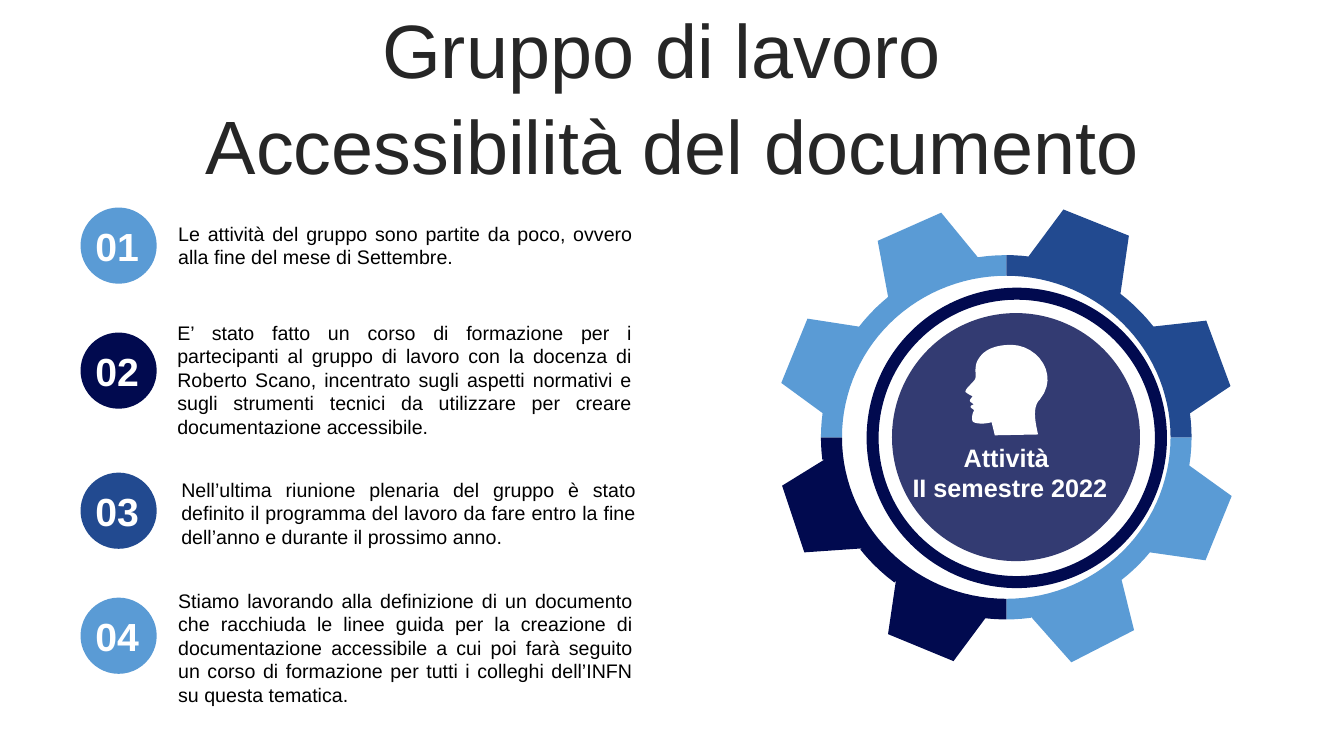
import math

import lxml.etree
import pptx
import pptx.dml.color
import pptx.enum.shapes
import pptx.enum.text
import pptx.oxml.ns
import pptx.util

Cm = pptx.util.Cm
Shapes = pptx.enum.shapes.MSO_SHAPE
Align = pptx.enum.text.PP_ALIGN
Anchor = pptx.enum.text.MSO_ANCHOR

LIGHT, NAVY, BLUE = "5A9BD5", "010A4F", "224A90"
WHITE, BLACK, CHARCOAL = "FFFFFF", "000000", "262626"

# Number, circle colour, circle top, text left, text top, text height, text
ACTIVITIES = [
    ("01", LIGHT, 5.23, 4.24, 5.46, 1.45,
     "Le attività del gruppo sono partite da poco, ovvero alla fine del mese di Settembre."),
    ("02", NAVY, 8.38, 4.22, 7.95, 3.25,
     "E’ stato fatto un corso di formazione per i partecipanti al gruppo di lavoro con la "
     "docenza di Roberto Scano, incentrato sugli aspetti normativi e sugli strumenti tecnici "
     "da utilizzare per creare documentazione accessibile."),
    ("03", BLUE, 11.91, 4.32, 11.91, 2.06,
     "Nell’ultima riunione plenaria del gruppo è stato definito il programma del lavoro da "
     "fare entro la fine dell’anno e durante il prossimo anno."),
    ("04", LIGHT, 15.06, 4.24, 14.71, 3.25,
     "Stiamo lavorando alla definizione di un documento che racchiuda le linee guida per la "
     "creazione di documentazione accessibile a cui poi farà seguito un corso di formazione "
     "per tutti i colleghi dell’INFN su questa tematica."),
]

GEAR_CENTER = (25.36, 11.02)
GEAR_INNER = (4.14, 4.07)
GEAR_OUTER = (4.67, 4.59)
# Clockwise from the right: colour and two teeth for each quarter of the gear
GEAR_QUARTERS = [
    (LIGHT, [(29.97, 11.73), (31.04, 12.5), (30.38, 14.12), (28.98, 13.92)],
     [(28.27, 14.63), (28.58, 15.88), (27, 16.69), (25.98, 15.54)]),
    (NAVY, [(24.84, 15.57), (24.03, 16.66), (22.38, 15.98), (22.58, 14.63)],
     [(21.72, 13.82), (20.27, 13.92), (19.71, 12.24), (20.78, 11.58)]),
    (LIGHT, [(20.73, 10.41), (19.69, 9.65), (20.35, 8.03), (21.64, 8.23)],
     [(22.38, 7.47), (22.12, 6.07), (23.72, 5.36), (24.64, 6.48)]),
    (BLUE, [(25.93, 6.45), (26.8, 5.28), (28.45, 5.94), (28.24, 7.39)],
     [(29.06, 8.23), (30.4, 8.08), (31.01, 9.73), (30, 10.41)]),
]

HEAD_START = (25.5, 8.69)
# Each entry is a straight line (one point) or a Bézier curve (three points)
HEAD_SEGMENTS = [
    [(25.02, 8.69), (24.74, 8.84), (24.61, 9.14)],
    [(24.54, 9.4), (24.64, 9.5), (24.54, 9.6)],
    [(24.43, 9.73), (24.33, 9.8), (24.33, 9.88)],
    [(24.38, 9.91), (24.43, 9.96), (24.51, 9.98)],
    [(24.49, 10.03), (24.41, 10.08), (24.46, 10.13)],
    [(24.54, 10.19)],
    [(24.51, 10.21), (24.46, 10.21), (24.46, 10.26)],
    [(24.49, 10.31), (24.56, 10.31), (24.54, 10.36)],
    [(24.49, 10.44), (24.49, 10.57), (24.51, 10.62)],
    [(24.59, 10.69), (24.82, 10.69), (24.99, 10.64)],
    [(25.07, 10.97)],
    [(26.16, 10.95)],
    [(26.04, 10.44), (26.06, 10.21), (26.21, 10.06)],
    [(26.7, 9.45), (26.16, 8.71), (25.5, 8.69)],
]


def color(hex_string):
    return pptx.dml.color.RGBColor.from_string(hex_string)


def gear_angle(point):
    """Angle in degrees, from 0 to 360, of a point on the gear's outer rim."""
    dx, dy = ((p - c) / r for p, c, r in zip(point, GEAR_CENTER, GEAR_OUTER))
    return math.degrees(math.atan2(dy, dx)) % 360


def gear_arc(radii, start, end):
    steps = max(2, math.ceil(abs(end - start) / 3))
    angles = [math.radians(start + (end - start) * i / steps) for i in range(steps + 1)]
    return [(GEAR_CENTER[0] + radii[0] * math.cos(a),
             GEAR_CENTER[1] + radii[1] * math.sin(a)) for a in angles]


def gear_quarter(start, first, second):
    """Outline of one quarter: rim and two teeth outside, plain arc inside."""
    end = start + 90
    return (gear_arc(GEAR_OUTER, start, gear_angle(first[0])) + first
            + gear_arc(GEAR_OUTER, gear_angle(first[-1]), gear_angle(second[0])) + second
            + gear_arc(GEAR_OUTER, gear_angle(second[-1]), end)
            + gear_arc(GEAR_INNER, end, start))


def curve_points(start, segments, steps=12):
    points = [start]
    for segment in segments:
        if len(segment) == 1:
            points += segment
            continue
        corners = [points[-1]] + segment
        for i in range(1, steps + 1):
            t = i / steps
            weights = [(1 - t) ** 3, 3 * t * (1 - t) ** 2, 3 * t * t * (1 - t), t ** 3]
            points.append(tuple(sum(w * c[axis] for w, c in zip(weights, corners))
                                for axis in (0, 1)))
    return points


class SlideBuilder:
    font_name = "Arial"

    def __init__(self, slide):
        self.slide = slide

    def finish(self, shape, fill, opacity=None):
        shape.shadow.inherit = False
        shape.fill.solid()
        shape.fill.fore_color.rgb = color(fill)
        shape.line.fill.background()
        if opacity:
            rgb = shape.fill._xPr.find(".//" + pptx.oxml.ns.qn("a:srgbClr"))
            alpha = lxml.etree.SubElement(rgb, pptx.oxml.ns.qn("a:alpha"))
            alpha.set("val", str(opacity * 1000))
        return shape

    def round_shape(self, kind, left, top, size, fill, opacity=None):
        shape = self.slide.shapes.add_shape(kind, Cm(left), Cm(top), Cm(size), Cm(size))
        return self.finish(shape, fill, opacity)

    def outline(self, points, fill):
        corners = [(Cm(x), Cm(y)) for x, y in points]
        builder = self.slide.shapes.build_freeform(*corners[0])
        builder.add_line_segments(corners[1:], close=True)
        return self.finish(builder.convert_to_shape(), fill)

    def text(self, left, top, width, height, lines, size, ink, align=Align.CENTER,
             bold=False, anchor=Anchor.TOP, line_spacing=None, gap=0):
        shape = self.slide.shapes.add_textbox(Cm(left), Cm(top), Cm(width), Cm(height))
        frame = shape.text_frame
        frame.word_wrap = True
        frame.vertical_anchor = anchor
        for index, line in enumerate(lines):
            paragraph = frame.add_paragraph() if index else frame.paragraphs[0]
            paragraph.text = line
            paragraph.alignment = align
            if line_spacing:
                paragraph.line_spacing = line_spacing
            if index and gap:
                paragraph.space_before = pptx.util.Pt(gap)
            paragraph.font.name = self.font_name
            paragraph.font.size = pptx.util.Pt(size)
            paragraph.font.bold = bold
            paragraph.font.color.rgb = color(ink)


def main():
    presentation = pptx.Presentation()
    presentation.slide_width = Cm(33.87)
    presentation.slide_height = Cm(19.05)
    builder = SlideBuilder(presentation.slides.add_slide(presentation.slide_layouts[6]))

    builder.text(0.86, 1.57, 32.16, 2.01, ["Gruppo di lavoro ", "Accessibilità del documento"],
                 54, CHARCOAL, anchor=Anchor.MIDDLE, line_spacing=0.9, gap=10)

    for number, fill, circle_top, left, top, height, activity in ACTIVITIES:
        builder.text(left, top, 11.96, height, [activity], 14, BLACK, Align.JUSTIFY)
        builder.round_shape(Shapes.OVAL, 2.03, circle_top, 1.92, fill)
        builder.text(2.08, circle_top + 0.24, 1.75, 1.45, [number], 28, WHITE,
                     bold=True, anchor=Anchor.MIDDLE)

    for index, (fill, first, second) in enumerate(GEAR_QUARTERS):
        builder.outline(gear_quarter(90 * index, first, second), fill)
    builder.round_shape(Shapes.OVAL, 22.48, 7.89, 6.25, NAVY, opacity=80)
    ring = builder.round_shape(Shapes.DONUT, 21.84, 7.25, 7.57, NAVY)
    ring.adjustments[0] = 0.04
    builder.outline(curve_points(HEAD_START, HEAD_SEGMENTS), WHITE)
    builder.text(22.2, 11.02, 6.5, 1.8, ["Attività ", "II semestre 2022"], 18, WHITE, bold=True)

    presentation.save("out.pptx")


if __name__ == "__main__":
    main()
